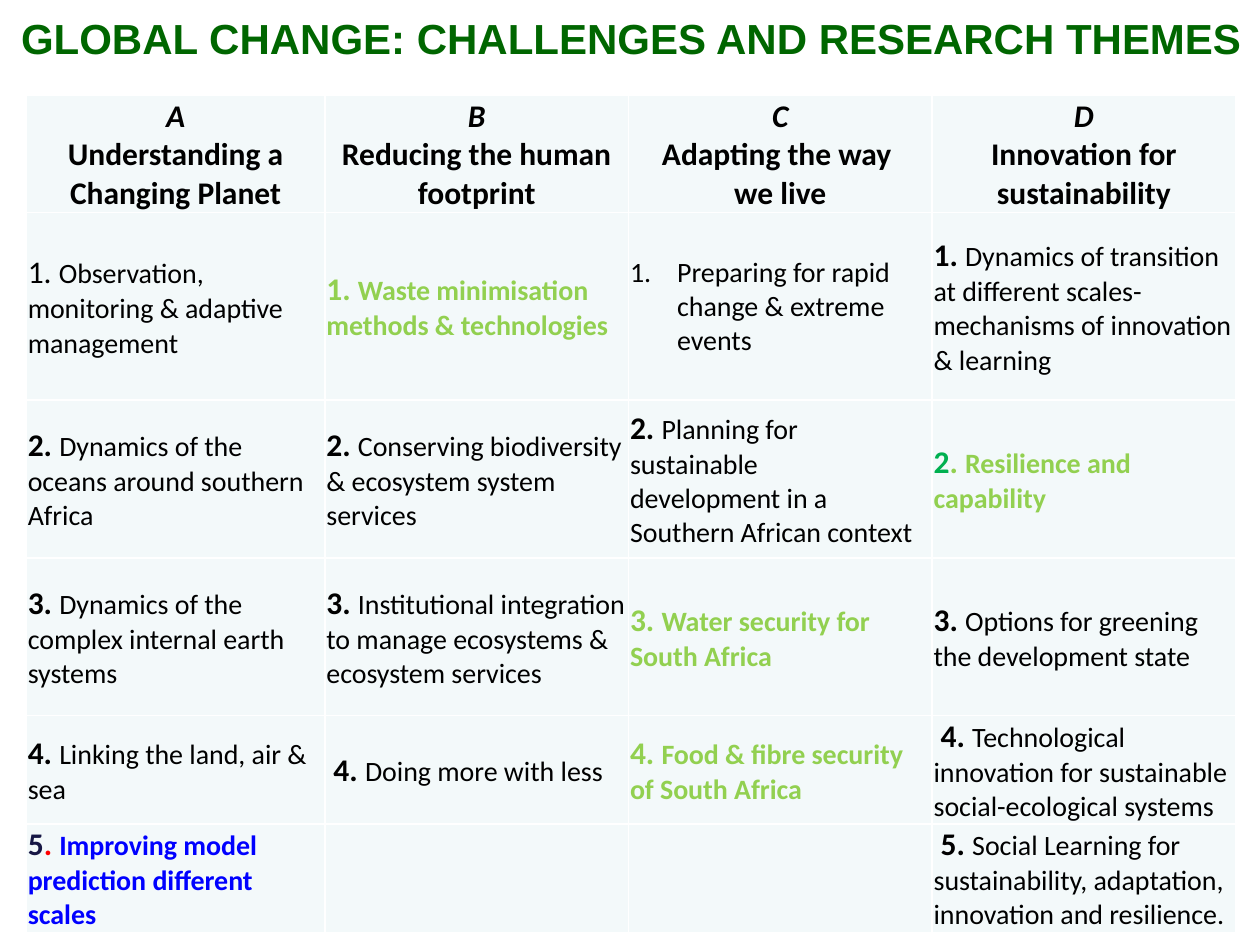
"""Build a slide with a table of global change challenges and research themes."""
from lxml.etree import SubElement
from pptx import Presentation
from pptx.dml.color import RGBColor
from pptx.enum.text import MSO_ANCHOR, MSO_AUTO_SIZE, PP_ALIGN
from pptx.oxml.ns import qn
from pptx.util import Cm, Pt

COLORS = {
    "white": "FFFFFF", "title": "006600", "cell": "F3F9FA", "black": "000000",
    "lime": "92D050", "green": "00B050", "navy": "171745", "red": "FF0000", "blue": "0000FF",
}
CHALLENGES = [
    ("A", "Understanding a Changing Planet"),
    ("B", "Reducing the human footprint"),
    ("C", "Adapting the way ", "we live"),
    ("D", "Innovation for sustainability"),
]
THEMES = [
    [("1. ", "Observation, monitoring & adaptive management", "black"),
     ("1. ", "Waste minimisation methods & technologies", "lime"),
     ("", "Preparing for rapid change & extreme events", "black"),
     ("1. ", "Dynamics of transition at different scales-mechanisms of innovation & learning", "black")],
    [("2. ", "Dynamics of the oceans around southern Africa", "black"),
     ("2. ", "Conserving biodiversity & ecosystem system services", "black"),
     ("2. ", "Planning for sustainable\ndevelopment in a Southern African context", "black"),
     ("2. ", "Resilience and capability", "lime")],
    [("3. ", "Dynamics of the complex internal earth systems", "black"),
     ("3. ", "Institutional integration to manage ecosystems & ecosystem services", "black"),
     ("3. ", "Water security for South Africa", "lime"),
     ("3. ", "Options for greening the development state", "black")],
    [("4. ", "Linking the land, air & sea", "black"),
     (" 4. ", "Doing more with less", "black"),
     ("4. ", "Food & fibre security of South Africa", "lime"),
     (" 4. ", "Technological innovation for sustainable social-ecological systems", "black")],
    [("5. ", "Improving model prediction different scales", "blue"),
     None,
     None,
     (" 5. ", "Social Learning for sustainability, adaptation, innovation and resilience.", "black")],
]
NUMBER_COLORS = {(1, 3): ("green", "lime"), (4, 0): ("navy", "red")}
COLUMN_WIDTHS = [6.02, 6.12, 6.12, 6.12]
ROW_HEIGHTS = [1.37, 3.78, 3.18, 3.18, 1.9, 2.03]


def add_run(paragraph, text, size, color, bold):
    run = paragraph.add_run()
    run.text = text
    run.font.size = Pt(size)
    run.font.bold = bold
    run.font.color.rgb = RGBColor.from_string(COLORS[color])


def format_cell(cell):
    cell.margin_left = cell.margin_right = cell.margin_top = Cm(0.03)
    cell.margin_bottom = 0
    cell.vertical_anchor = MSO_ANCHOR.MIDDLE
    properties = cell._tc.get_or_add_tcPr()
    for side in ("a:lnL", "a:lnR", "a:lnT", "a:lnB"):
        border = SubElement(properties, qn(side), w=str(Pt(1)))
        SubElement(SubElement(border, qn("a:solidFill")), qn("a:srgbClr"), val=COLORS["white"])
    cell.fill.solid()
    cell.fill.fore_color.rgb = RGBColor.from_string(COLORS["cell"])


presentation = Presentation()
presentation.slide_width, presentation.slide_height = Cm(25.4), Cm(19.05)
slide = presentation.slides.add_slide(presentation.slide_layouts[5])

title = slide.shapes.title
title.left, title.top, title.width, title.height = Cm(0.05), Cm(0), Cm(25.35), Cm(1.52)
title.fill.solid()
title.fill.fore_color.rgb = RGBColor.from_string(COLORS["white"])
title.text_frame.text = "GLOBAL CHANGE: CHALLENGES AND RESEARCH THEMES"
title.text_frame.auto_size = MSO_AUTO_SIZE.NONE
title.text_frame.vertical_anchor = MSO_ANCHOR.MIDDLE
heading = title.text_frame.paragraphs[0]
heading.alignment = PP_ALIGN.CENTER
heading.font.name = "Arial"
heading.font.size = Pt(24)
heading.font.bold = True
heading.font.color.rgb = RGBColor.from_string(COLORS["title"])

matrix = slide.shapes.add_table(
    len(ROW_HEIGHTS), len(COLUMN_WIDTHS), Cm(0.53), Cm(1.93),
    Cm(sum(COLUMN_WIDTHS)), Cm(sum(ROW_HEIGHTS))).table
matrix.first_row = matrix.horz_banding = False
for column, width in zip(matrix.columns, COLUMN_WIDTHS):
    column.width = Cm(width)
for row, height in zip(matrix.rows, ROW_HEIGHTS):
    row.height = Cm(height)
for cell in matrix.iter_cells():
    format_cell(cell)

for column_index, lines in enumerate(CHALLENGES):
    header = matrix.cell(0, column_index).text_frame
    header.text = "\n".join(lines)
    for line_index, paragraph in enumerate(header.paragraphs):
        paragraph.alignment = PP_ALIGN.CENTER
        paragraph.font.name = "Calibri"
        paragraph.font.size = Pt(18)
        paragraph.font.bold = True
        paragraph.font.italic = line_index == 0
        paragraph.font.color.rgb = RGBColor.from_string(COLORS["black"])

for row_index, themes in enumerate(THEMES):
    for column_index, theme in enumerate(themes):
        if theme is None:
            continue
        number, wording, color = theme
        paragraph = matrix.cell(row_index + 1, column_index).text_frame.paragraphs[0]
        paragraph.font.name = "Calibri"
        if (row_index, column_index) in NUMBER_COLORS:
            digit_color, dot_color = NUMBER_COLORS[row_index, column_index]
            add_run(paragraph, number[0], 18, digit_color, True)
            add_run(paragraph, number[1:], 18, dot_color, True)
        elif number:
            add_run(paragraph, number, 18, color, (row_index, column_index) != (0, 0))
        else:
            list_format = paragraph._p.get_or_add_pPr()
            list_format.set("marL", str(Cm(0.95)))
            list_format.set("indent", str(-Cm(0.95)))
            list_format.insert_element_before(
                list_format.makeelement(qn("a:buAutoNum"), {"type": "arabicPeriod"}), "a:defRPr")
        for line_index, line in enumerate(wording.split("\n")):
            if line_index:
                paragraph.add_line_break()
            add_run(paragraph, line, 16, color, color != "black")

presentation.save("out.pptx")
